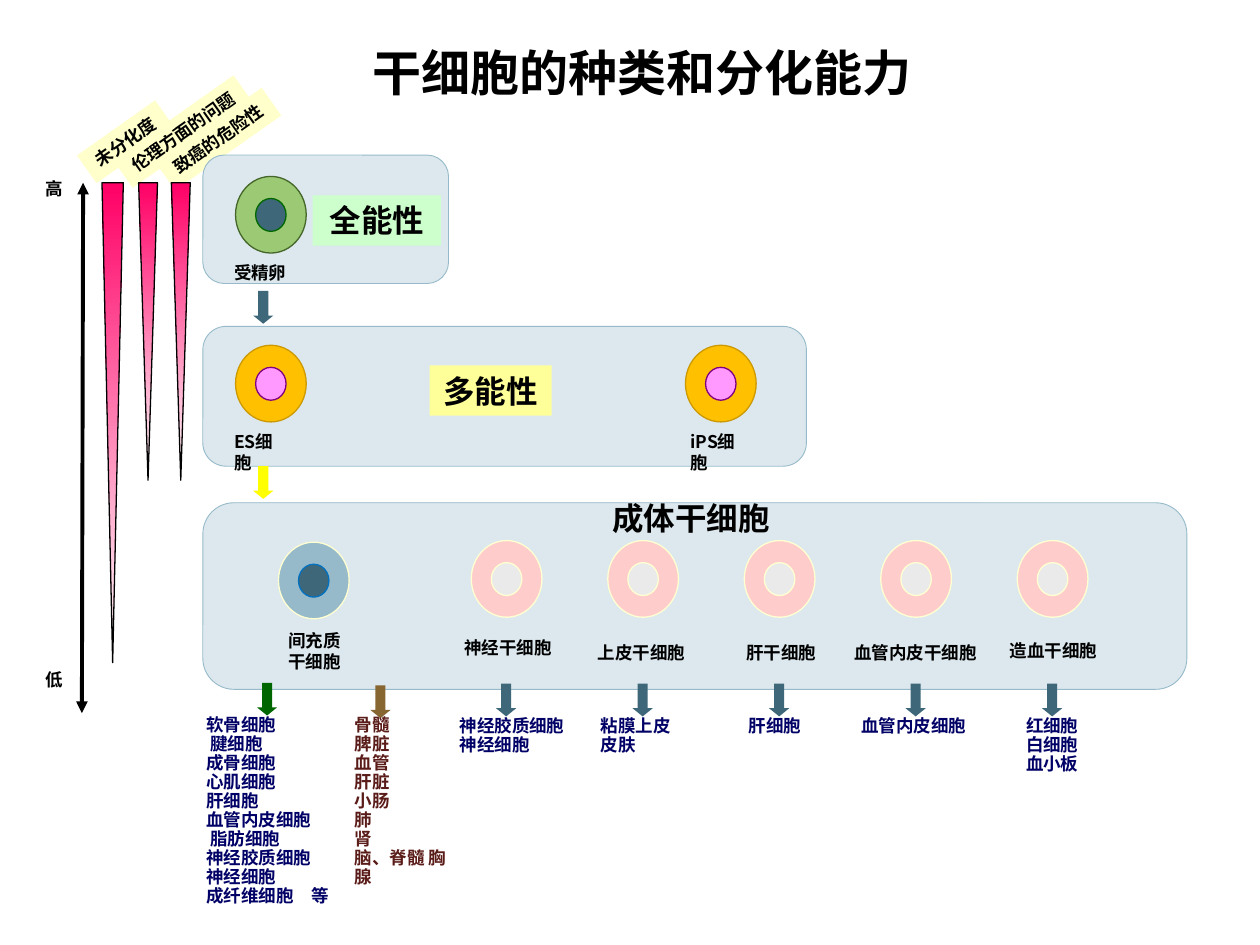
from dataclasses import dataclass

from lxml import etree
from pptx import Presentation
from pptx import util as u
from pptx.dml.color import RGBColor
from pptx.enum import shapes, text
from pptx.oxml import ns

Kind = shapes.MSO_SHAPE
Align = text.PP_ALIGN


@dataclass(frozen=True)
class Theme:
    font: str = "Noto Sans CJK SC"
    title: int = 28
    heading: int = 18
    body: int = 10
    black: str = "000000"
    navy: str = "000066"
    maroon: str = "5A1C18"
    panel: str = "DCE8ED"
    panel_edge: str = "96BAC9"
    teal: str = "3E6879"
    green: str = "006600"
    brown: str = "876631"
    yellow: str = "FFFF00"
    tag: str = "FFFFCC"
    mint: str = "CCFFCC"
    lemon: str = "FFFF99"
    wedge_top: str = "FF0066"
    wedge_tip: str = "FFFFFF"
    zygote: tuple = ("9BC974", "446628", "3E6879", "006600")
    pluripotent: tuple = ("FFC000", "CC9900", "FF99FF", "81007F")
    mesenchymal: tuple = ("96BAC9", "FFFFD2", "3E6879", "0070C0")
    adult: tuple = ("FFCCCC", "FFFFD2", "EAEAEA", "FFFFD2")


THEME = Theme()


def points(values):
    return [u.Pt(value) for value in values]


def add_shape(parent, kind, place, fill=None, line=None, weight=0.75):
    shape = parent.shapes.add_shape(kind, *points(place))
    shape.shadow.inherit = False
    if fill:
        shape.fill.solid()
        shape.fill.fore_color.rgb = RGBColor.from_string(fill)
    if line:
        shape.line.color.rgb = RGBColor.from_string(line)
        shape.line.width = u.Pt(weight)
    else:
        shape.line.fill.background()
    return shape


def write(box, words, size=THEME.body, color=THEME.black, align=Align.LEFT,
          wrap=False, spacing=None, anchor=text.MSO_ANCHOR.TOP):
    frame = box.text_frame
    frame.text = words
    frame.word_wrap = wrap
    frame.vertical_anchor = anchor
    frame.auto_size = text.MSO_AUTO_SIZE.SHAPE_TO_FIT_TEXT
    for para in frame.paragraphs:
        para.alignment = align
        if spacing:
            para.line_spacing = spacing
        for span in para.runs:
            span.font.size = u.Pt(size)
            span.font.bold = True
            span.font.name = THEME.font
            span.font.color.rgb = RGBColor.from_string(color)
            east = etree.SubElement(span.font._element, ns.qn("a:ea"))
            east.set("typeface", THEME.font)


def add_text(page, place, words, **style):
    write(page.shapes.add_textbox(*points(place)), words, **style)


def add_list(page, place, lines, color=THEME.navy, align=Align.LEFT):
    add_text(page, place, "\n".join(lines), color=color, align=align,
             wrap=True, spacing=0.9)


def add_tag(page, place, words, fill, rotation=0, **style):
    box = add_shape(page, Kind.RECTANGLE, place, fill)
    box.rotation = rotation
    write(box, words, **style)


def add_panel(page, place):
    add_shape(page, Kind.ROUNDED_RECTANGLE, place, THEME.panel, THEME.panel_edge, 0.5)


def add_cell(page, left, top, colors):
    body, edge, nucleus, rim = colors
    group = page.shapes.add_group_shape()
    add_shape(group, Kind.OVAL, (left, top, 40.4, 43.8), body, edge)
    add_shape(group, Kind.OVAL, (left + 11.5, top + 12.6, 17.4, 18.8), nucleus, rim)


def add_down_arrow(page, left, top, color):
    arrow = add_shape(page, Kind.DOWN_ARROW, (left, top, 11.5, 18.7), color)
    arrow.adjustments[1] = 0.405


def add_wedge(page, left, width, height):
    wedge = add_shape(page, Kind.ISOSCELES_TRIANGLE, (left, 104.4, width, height),
                      line=THEME.black)
    wedge.fill.gradient()
    wedge.fill.gradient_angle = 270
    for stop, color in zip(wedge.fill.gradient_stops, (THEME.wedge_tip, THEME.wedge_top)):
        stop.color.rgb = RGBColor.from_string(color)
    wedge._element.spPr.find(ns.qn("a:xfrm")).set("flipV", "1")


def add_scale(page, start, end):
    axis = page.shapes.add_connector(shapes.MSO_CONNECTOR.STRAIGHT, *points(start + end))
    axis.line.color.rgb = RGBColor.from_string(THEME.black)
    axis.line.width = u.Pt(2.25)
    line = axis.line._get_or_add_ln()
    for name in ("a:headEnd", "a:tailEnd"):
        etree.SubElement(line, ns.qn(name)).set("type", "triangle")
    etree.SubElement(axis._element.spPr, ns.qn("a:effectLst"))


def add_scales(page):
    add_scale(page, (47.5, 104.4), (46.8, 407.5))
    add_text(page, (18.7, 97.9, 24.5, 19.4), "高")
    add_text(page, (18.7, 378.7, 24.5, 19.4), "低")
    for left, width, height in ((58.3, 12.2, 274.3), (79.2, 10.8, 170), (97.9, 10.8, 170)):
        add_wedge(page, left, width, height)


def add_adult_cells(page):
    columns = (
        ("神经干细胞", 257.8, 360.7, 64.8,
         ("神经胶质细胞", "神经细胞"), 255.6, 77.8, Align.JUSTIFY),
        ("上皮干细胞", 334.1, 363.6, 64.8,
         ("粘膜上皮", "皮肤"), 336.2, 58.3, Align.JUSTIFY),
        ("肝干细胞", 419, 363.6, 54.7, ("肝细胞",), 416.9, 51.8, Align.CENTER),
        ("血管内皮干细胞", 481, 363.6, 84.2,
         ("血管内皮细胞",), 484.6, 74.9, Align.CENTER),
        ("造血干细胞", 569.5, 362.2, 64.8,
         ("红细胞", "白细胞", "血小板"), 578.2, 46.1, Align.CENTER),
    )
    for index, (name, left, top, width, products, start, span, align) in enumerate(columns):
        cell_left = 269.3 + 78 * index
        add_cell(page, cell_left, 308.9, THEME.adult)
        add_down_arrow(page, cell_left + 14.2, 390.7, THEME.teal)
        add_text(page, (left, top, width, 19.4), name, align=Align.CENTER)
        height = 6.5 + 11.2 * len(products)
        add_list(page, (start, 406.6, span, height), products, align=align)


def add_mesenchymal_cell(page):
    add_cell(page, 159.1, 309.8, THEME.mesenchymal)
    add_text(page, (153.4, 356.4, 52.6, 31.7), "间充质干细胞",
             align=Align.CENTER, wrap=True)
    add_down_arrow(page, 146.9, 390.2, THEME.green)
    add_down_arrow(page, 211.7, 391.7, THEME.brown)
    add_list(page, (110.9, 406.1, 90, 116.6),
             ("软骨细胞", " 腱细胞", "成骨细胞", "心肌细胞", "肝细胞", "血管内皮细胞",
              " 脂肪细胞", "神经胶质细胞", "神经细胞", "成纤维细胞　等"))
    add_list(page, (195.8, 406.1, 67.7, 105.1),
             ("骨髓", "脾脏", "血管", "肝脏", "小肠", "肺", "肾", "脑、脊髓 胸腺"),
             color=THEME.maroon)


def main():
    deck = Presentation()
    deck.slide_width, deck.slide_height = points((720, 540))
    page = deck.slides.add_slide(deck.slide_layouts[6])

    add_tag(page, (87.8, 69.8, 74.2, 19.4), "致癌的危险性", THEME.tag, 324.8)
    for top, width, height in ((88.6, 140.4, 73.4), (186.5, 344.9, 79.9), (287.3, 562.3, 106.6)):
        add_panel(page, (115.9, top, width, height))
    add_text(page, (99.4, 15.1, 535, 51.8), "干细胞的种类和分化能力", size=THEME.title,
             align=Align.CENTER, wrap=True, anchor=text.MSO_ANCHOR.MIDDLE)

    add_cell(page, 134.6, 100.8, THEME.zygote)
    add_text(page, (126.7, 146.2, 44.6, 19.4), "受精卵")
    add_tag(page, (178.6, 111.6, 73.4, 28.8), "全能性", THEME.mint,
            size=THEME.heading, align=Align.CENTER, wrap=True)
    add_down_arrow(page, 144.7, 166.3, THEME.teal)

    for cell_left, left, width, name in ((134.6, 126.7, 44.6, "ES细胞"),
                                         (391.7, 387.4, 49.7, "iPS细胞")):
        add_cell(page, cell_left, 197.3, THEME.pluripotent)
        add_text(page, (left, 242.6, width, 19.4), name, wrap=True)
    add_tag(page, (245.5, 208.8, 69.8, 28.8), "多能性", THEME.lemon,
            size=THEME.heading, align=Align.CENTER)
    add_down_arrow(page, 144.7, 266.4, THEME.yellow)

    add_text(page, (342.7, 281.5, 113, 28.8), "成体干细胞", size=THEME.heading, wrap=True)
    add_mesenchymal_cell(page)
    add_adult_cells(page)

    add_tag(page, (62.6, 65.5, 84.2, 19.4), "伦理方面的问题", THEME.tag, 324.8)
    add_tag(page, (44.6, 71.3, 54.7, 19.4), "未分化度", THEME.tag, 324.8)
    add_scales(page)
    deck.save("out.pptx")


if __name__ == "__main__":
    main()
